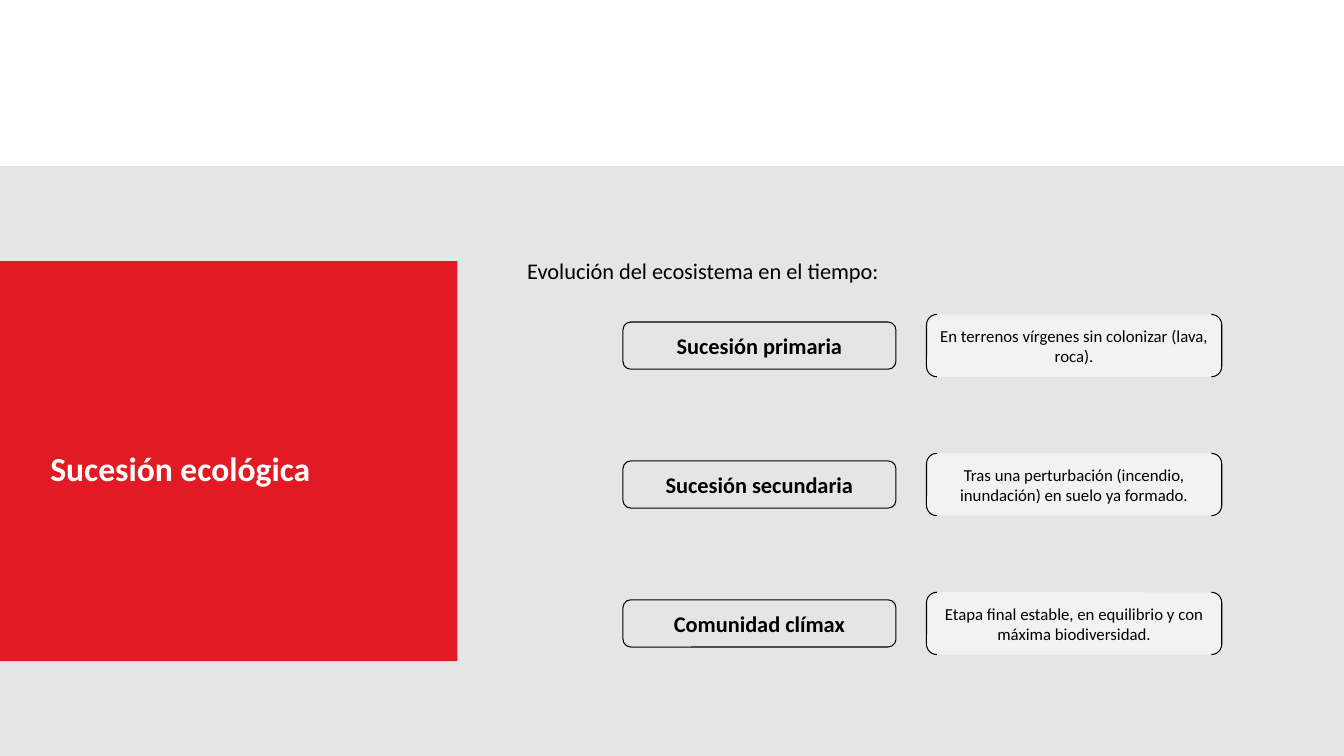
from lxml.etree import SubElement
from pptx import Presentation
from pptx.dml.color import RGBColor
from pptx.enum.shapes import MSO_SHAPE as Shape
from pptx.enum.text import MSO_ANCHOR as Anchor, MSO_AUTO_SIZE as AutoSize, PP_ALIGN as Align
from pptx.oxml.ns import qn
from pptx.util import Cm, Pt

TITLE = "Sucesión ecológica"
INTRO = "Evolución del ecosistema en el tiempo:"
STAGES = [
    ("Sucesión primaria", "En terrenos vírgenes sin colonizar (lava, roca)."),
    ("Sucesión secundaria", "Tras una perturbación (incendio, inundación) en suelo ya formado."),
    ("Comunidad clímax", "Etapa final estable, en equilibrio y con máxima biodiversidad."),
]
COLORS = {"panel": "E5E5E5", "red": "E21A23", "white": "FFFFFF", "black": "000000"}
FONTS = {
    "title": {"size": Pt(24), "bold": True},
    "intro": {"size": Pt(16), "bold": False},
    "stage": {"size": Pt(16), "bold": True},
    "detail": {"size": Pt(12), "bold": False},
}
PAGE_WIDTH, PAGE_HEIGHT = 33.87, 19.05
PANEL_TOP = 4.19
STAGE_LEFT, STAGE_WIDTH, STAGE_HEIGHT = 15.7, 6.88, 1.19
DETAIL_LEFT, DETAIL_WIDTH, DETAIL_HEIGHT = 23.35, 7.44, 1.57
FIRST_MIDDLE, ROW_STEP = 8.71, 3.5


def color(name):
    return RGBColor.from_string(COLORS[name])


def write(box, text, style, ink="black", align=Align.LEFT, anchor=Anchor.MIDDLE):
    frame = box.text_frame
    frame.word_wrap = True
    frame.vertical_anchor = anchor
    para = frame.paragraphs[0]
    para.alignment = align
    span = para.add_run()
    span.text = text
    for name, value in {"name": "Calibri", **FONTS[style]}.items():
        setattr(span.font, name, value)
    span.font.color.rgb = color(ink)


def add_box(page, kind, place, fill=None, line=None, alpha=None):
    box = page.shapes.add_shape(kind, *map(Cm, place))
    box.shadow.inherit = False
    if fill:
        box.fill.solid()
        box.fill.fore_color.rgb = color(fill)
    else:
        box.fill.background()
    if alpha:
        tint = box.fill._xPr.find(qn("a:solidFill"))[0]
        SubElement(tint, qn("a:alpha"), val=str(alpha * 1000))
    if line:
        box.line.color.rgb = color(line)
        box.line.width = Pt(0.75)
    else:
        box.line.fill.background()
    return box


def main():
    deck = Presentation()
    deck.slide_width, deck.slide_height = Cm(PAGE_WIDTH), Cm(PAGE_HEIGHT)
    page = deck.slides.add_slide(deck.slide_layouts[6])

    add_box(page, Shape.RECTANGLE, (0, PANEL_TOP, PAGE_WIDTH, PAGE_HEIGHT - PANEL_TOP), "panel")
    add_box(page, Shape.RECTANGLE, (0, 6.58, 11.53, 10.08), "red")

    title = page.shapes.add_textbox(Cm(1.02), Cm(11.15), Cm(7.65), Cm(2.31))
    write(title, TITLE, "title", "white", anchor=Anchor.TOP)
    title.text_frame.auto_size = AutoSize.SHAPE_TO_FIT_TEXT

    intro = add_box(page, Shape.ROUNDED_RECTANGLE, (12.98, 6.22, 10.36, STAGE_HEIGHT))
    write(intro, INTRO, "intro")

    for row, (name, text) in enumerate(STAGES):
        middle = FIRST_MIDDLE + row * ROW_STEP
        place = (STAGE_LEFT, middle - STAGE_HEIGHT / 2, STAGE_WIDTH, STAGE_HEIGHT)
        stage = add_box(page, Shape.ROUNDED_RECTANGLE, place, line="black")
        write(stage, name, "stage", align=Align.CENTER)
        place = (DETAIL_LEFT, middle - DETAIL_HEIGHT / 2, DETAIL_WIDTH, DETAIL_HEIGHT)
        detail = add_box(page, Shape.DOUBLE_BRACKET, place, "white", "black", 50)
        write(detail, text, "detail", align=Align.CENTER)

    deck.save("out.pptx")


if __name__ == "__main__":
    main()
